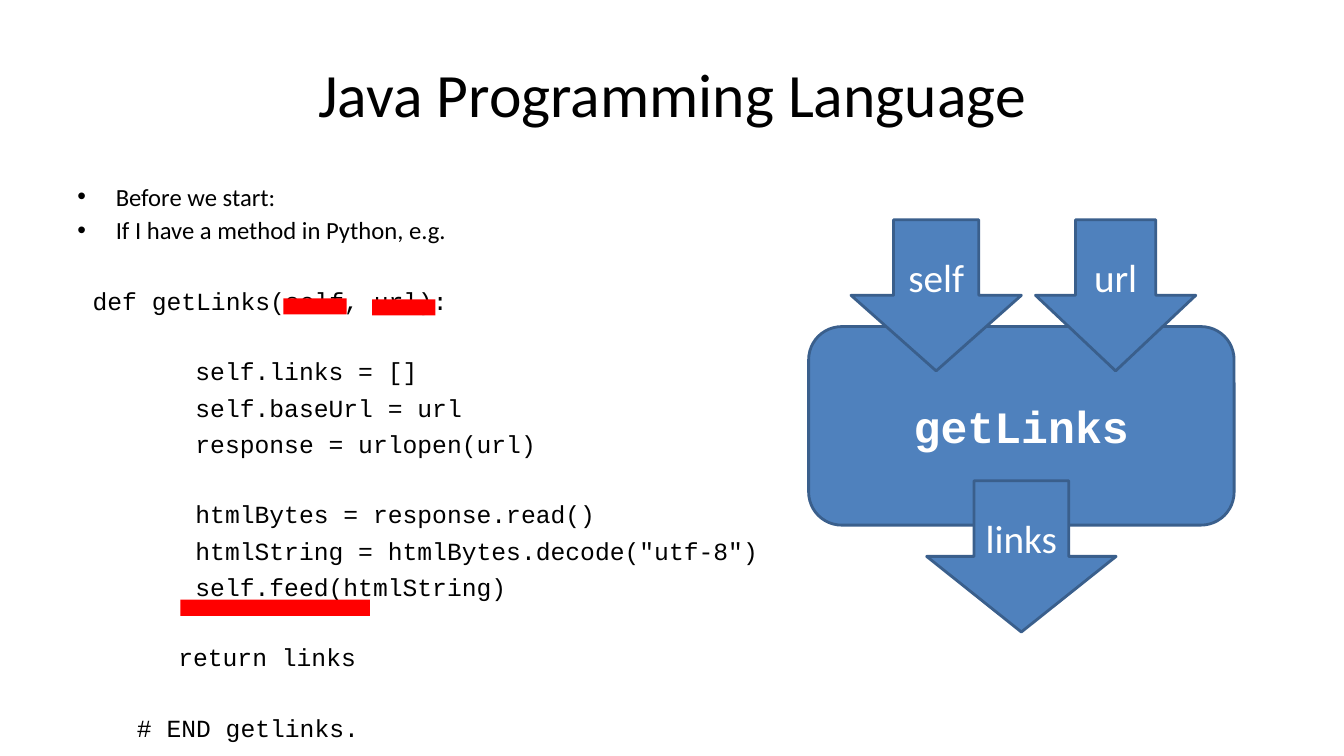
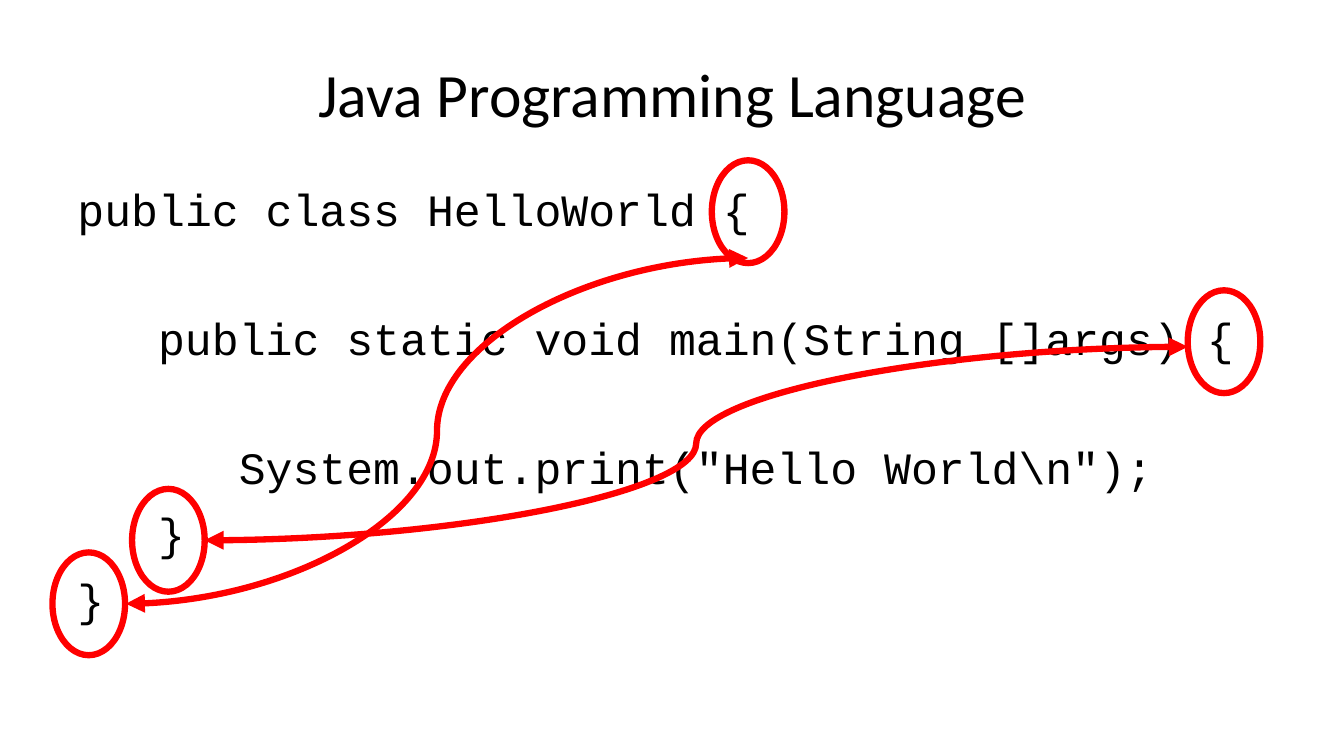
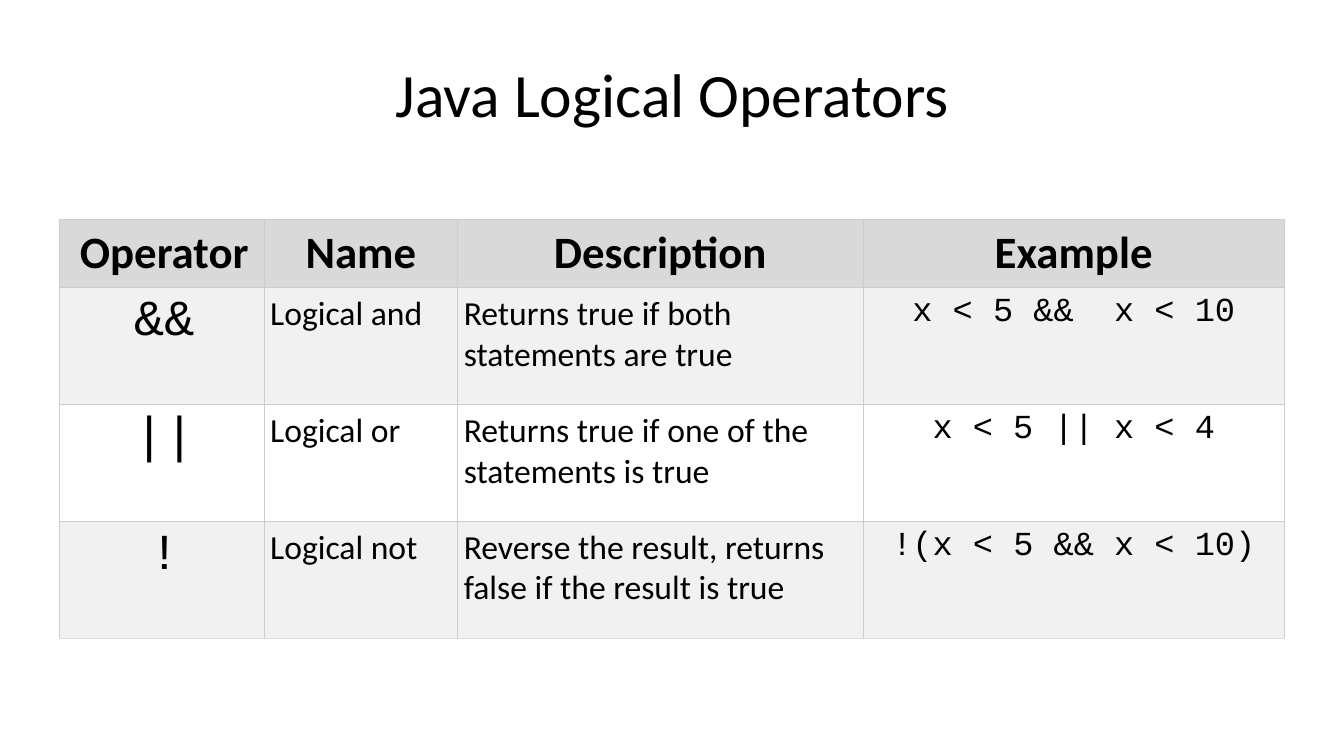
import dataclasses
import typing

import pptx
import pptx.dml.color
import pptx.enum.shapes
import pptx.enum.text
import pptx.oxml.ns
import pptx.util
from lxml import etree

EMU_PER_PX = 9144  # 100 px to the inch
COLORS = {
    "text": "000000", "white": "FFFFFF", "block": "4F81BD", "block_edge": "3A5F8C",
    "mark": "FF0000", "header": "D9D9D9", "band": "F1F1F1",
    "border": "CCCCCC", "last_border": "DDDDDD",
}
SANS, MONO = "Calibri", "Courier New"
CENTER = pptx.enum.text.PP_ALIGN.CENTER
LEFT = pptx.enum.text.PP_ALIGN.LEFT
MIDDLE = pptx.enum.text.MSO_ANCHOR.MIDDLE
SHAPES = pptx.enum.shapes.MSO_SHAPE


class Box(typing.NamedTuple):
    left: int
    top: int
    width: int
    height: int


TITLE_BOX = Box(67, 30, 1200, 125)
BODY_BOX = Box(67, 175, 1200, 495)


@dataclasses.dataclass
class Line:
    """One body line: indent in px, space before in points."""
    text: str
    indent: int = 0
    before: float = 0
    font: str = MONO
    bullet: bool = False


@dataclasses.dataclass
class Block:
    label: str
    box: Box
    kind: typing.Any = SHAPES.DOWN_ARROW
    size: float = 28
    font: str = SANS
    bold: bool = False


@dataclasses.dataclass
class ColumnStyle:
    width: int
    size: float
    font: str
    align: typing.Any
    left_inset: int = 6


def px(length: int) -> int:
    return pptx.util.Emu(length * EMU_PER_PX)


def place(box: Box) -> list[int]:
    return [px(length) for length in box]


def rgb(name: str) -> pptx.dml.color.RGBColor:
    return pptx.dml.color.RGBColor.from_string(COLORS[name])


def sub(parent: typing.Any, tag: str, **attributes: str) -> typing.Any:
    return etree.SubElement(parent, pptx.oxml.ns.qn(tag), attributes)


def format_text(paragraph: typing.Any, size: float, font: str, color: str = "text",
                align: typing.Any = CENTER, bold: bool = False) -> None:
    paragraph.alignment = align
    for run in paragraph.runs:
        run.font.size = pptx.util.Pt(size)
        run.font.name = font
        run.font.bold = bold
        run.font.color.rgb = rgb(color)


def add_titled_slide(deck: typing.Any, title: str) -> typing.Any:
    slide = deck.slides.add_slide(deck.slide_layouts[5])
    heading = slide.shapes.title
    heading.left, heading.top, heading.width, heading.height = place(TITLE_BOX)
    frame = heading.text_frame
    frame.text = title
    frame.word_wrap = True
    frame.auto_size = pptx.enum.text.MSO_AUTO_SIZE.NONE
    frame.vertical_anchor = MIDDLE
    format_text(frame.paragraphs[0], 44, SANS)
    return slide


def add_body(slide: typing.Any, lines: list[Line], size: float) -> None:
    frame = slide.shapes.add_textbox(*place(BODY_BOX)).text_frame
    frame.word_wrap = True
    for number, line in enumerate(lines):
        paragraph = frame.add_paragraph() if number else frame.paragraphs[0]
        paragraph.text = line.text
        paragraph.space_before = pptx.util.Pt(line.before)
        format_text(paragraph, size, line.font, align=LEFT)
        properties = paragraph._p.get_or_add_pPr()
        properties.set("marL", str(px(line.indent)))
        properties.set("indent", str(-px(line.indent) if line.bullet else 0))
        if line.bullet:
            sub(properties, "a:buFont", typeface="Arial")
            sub(properties, "a:buChar", char="•")
        else:
            sub(properties, "a:buNone")


def add_block(slide: typing.Any, block: Block) -> None:
    shape = slide.shapes.add_shape(block.kind, *place(block.box))
    shape.shadow.inherit = False
    shape.fill.solid()
    shape.fill.fore_color.rgb = rgb("block")
    shape.line.color.rgb = rgb("block_edge")
    shape.line.width = pptx.util.Pt(2)
    frame = shape.text_frame
    frame.text = block.label
    frame.vertical_anchor = MIDDLE
    format_text(frame.paragraphs[0], block.size, block.font, "white", bold=block.bold)


def add_bar(slide: typing.Any, box: Box) -> None:
    bar = slide.shapes.add_shape(SHAPES.RECTANGLE, *place(box))
    bar.shadow.inherit = False
    bar.fill.solid()
    bar.fill.fore_color.rgb = rgb("mark")
    bar.line.fill.background()


def add_ring(slide: typing.Any, left: int, top: int) -> None:
    ring = slide.shapes.add_shape(SHAPES.OVAL, *place(Box(left, top, 72, 102)))
    ring.shadow.inherit = False
    ring.fill.background()
    ring.line.color.rgb = rgb("mark")
    ring.line.width = pptx.util.Pt(4.5)


def add_brace_link(slide: typing.Any, ends: tuple[int, int, int, int]) -> None:
    link = slide.shapes.add_connector(
        pptx.enum.shapes.MSO_CONNECTOR.CURVE, *[px(end) for end in ends])
    link.line.color.rgb = rgb("mark")
    link.line.width = pptx.util.Pt(4.5)
    outline = link.line._get_or_add_ln()
    sub(outline, "a:headEnd", type="triangle")
    sub(outline, "a:tailEnd", type="triangle")
    sub(link._element.spPr, "a:effectLst")


def add_borders(cell: typing.Any, bottom: str) -> None:
    properties = cell._tc.get_or_add_tcPr()
    edges = {"a:lnL": "border", "a:lnR": "border", "a:lnT": "border", "a:lnB": bottom}
    for tag, color in edges.items():
        edge = sub(properties, tag, w=str(pptx.util.Pt(0.5)))
        sub(sub(edge, "a:solidFill"), "a:srgbClr", val=COLORS[color])


def add_operator_table(slide: typing.Any, rows: list[list[str]],
                       columns: list[ColumnStyle]) -> None:
    heights = [67] + [116] * (len(rows) - 1)
    box = Box(59, 218, sum(column.width for column in columns), sum(heights))
    table = slide.shapes.add_table(len(rows), len(columns), *place(box)).table
    for column, style in zip(table.columns, columns):
        column.width = px(style.width)
    for r, texts in enumerate(rows):
        table.rows[r].height = px(heights[r])
        fill = "header" if r == 0 else ("band" if r % 2 else "white")
        for c, (text, style) in enumerate(zip(texts, columns)):
            cell = table.cell(r, c)
            cell.text = text
            cell.margin_left = px(style.left_inset)
            cell.margin_right = cell.margin_top = cell.margin_bottom = px(6)
            add_borders(cell, "last_border" if r == len(rows) - 1 else "border")
            cell.fill.solid()
            cell.fill.fore_color.rgb = rgb(fill)
            paragraph = cell.text_frame.paragraphs[0]
            if r == 0:
                format_text(paragraph, 32, SANS, bold=True)
            else:
                format_text(paragraph, style.size, style.font, align=style.align)


def build_method_slide(deck: typing.Any) -> None:
    slide = add_titled_slide(deck, "Java Programming Language")
    near, far = 4.7, 29.3  # space before a line, and after a break
    add_body(slide, [
        Line("Before we start:", 38, 2.5, SANS, True),
        Line("If I have a method in Python, e.g.", 38, 3, SANS, True),
        Line("def getLinks(self, url):", 15, far),
        Line("self.links = []", 117, far),
        Line("self.baseUrl = url", 117, near),
        Line("response = urlopen(url)", 117, near),
        Line("htmlBytes = response.read()", 117, far),
        Line('htmlString = htmlBytes.decode("utf-8")', 117, near),
        Line("self.feed(htmlString)", 117, near),
        Line("return links", 100, far),
        Line("# END getlinks.", 59, far),
    ], 17.6)
    # Method with its inputs and its output
    for block in (
        Block("getLinks", Box(802, 324, 422, 197), SHAPES.ROUNDED_RECTANGLE, 32, MONO, True),
        Block("self", Box(844, 218, 169, 150)),
        Block("url", Box(1027, 218, 159, 150)),
        Block("links", Box(919, 477, 188, 150)),
    ):
        add_block(slide, block)
    # Red bars at the inputs and the output
    for left, top, width in ((281, 296, 63), (369, 297, 63), (179, 595, 188)):
        add_bar(slide, Box(left, top, width, 16))


def build_braces_slide(deck: typing.Any) -> None:
    slide = add_titled_slide(deck, "Java Programming Language")
    near, far = 8.8, 53.9
    add_body(slide, [
        Line("public class HelloWorld {", 0, 6.4),
        Line("public static void main(String []args) {", 80, far),
        Line('System.out.print("Hello World\\n");', 160, far),
        Line("}", 80, near),
        Line("}", 0, near),
    ], 32)
    # Matching braces, ringed and linked
    for left, top in ((1178, 288), (131, 485), (706, 159), (52, 548)):
        add_ring(slide, left, top)
    for ends in ((742, 256, 125, 599), (1178, 344, 203, 536)):
        add_brace_link(slide, ends)


def build_operators_slide(deck: typing.Any) -> None:
    slide = add_titled_slide(deck, "Java Logical Operators")
    add_operator_table(slide, [
        ["Operator", "Name", "Description", "Example"],
        ["&&", "Logical and", "Returns true if both statements are true",
         "x < 5 &&  x < 10"],
        ["||", "Logical or", "Returns true if one of the statements is true",
         "x < 5 || x < 4"],
        ["!", "Logical not", "Reverse the result, returns false if the result is true",
         "!(x < 5 && x < 10)"],
    ], [
        ColumnStyle(203, 36, MONO, CENTER, 11),
        ColumnStyle(192, 24, SANS, LEFT),
        ColumnStyle(402, 24, SANS, LEFT),
        ColumnStyle(418, 24, MONO, CENTER),
    ])


def main() -> None:
    deck = pptx.Presentation()
    deck.slide_width, deck.slide_height = px(1333), px(750)
    build_method_slide(deck)
    build_braces_slide(deck)
    build_operators_slide(deck)
    deck.save("out.pptx")


if __name__ == "__main__":
    main()
